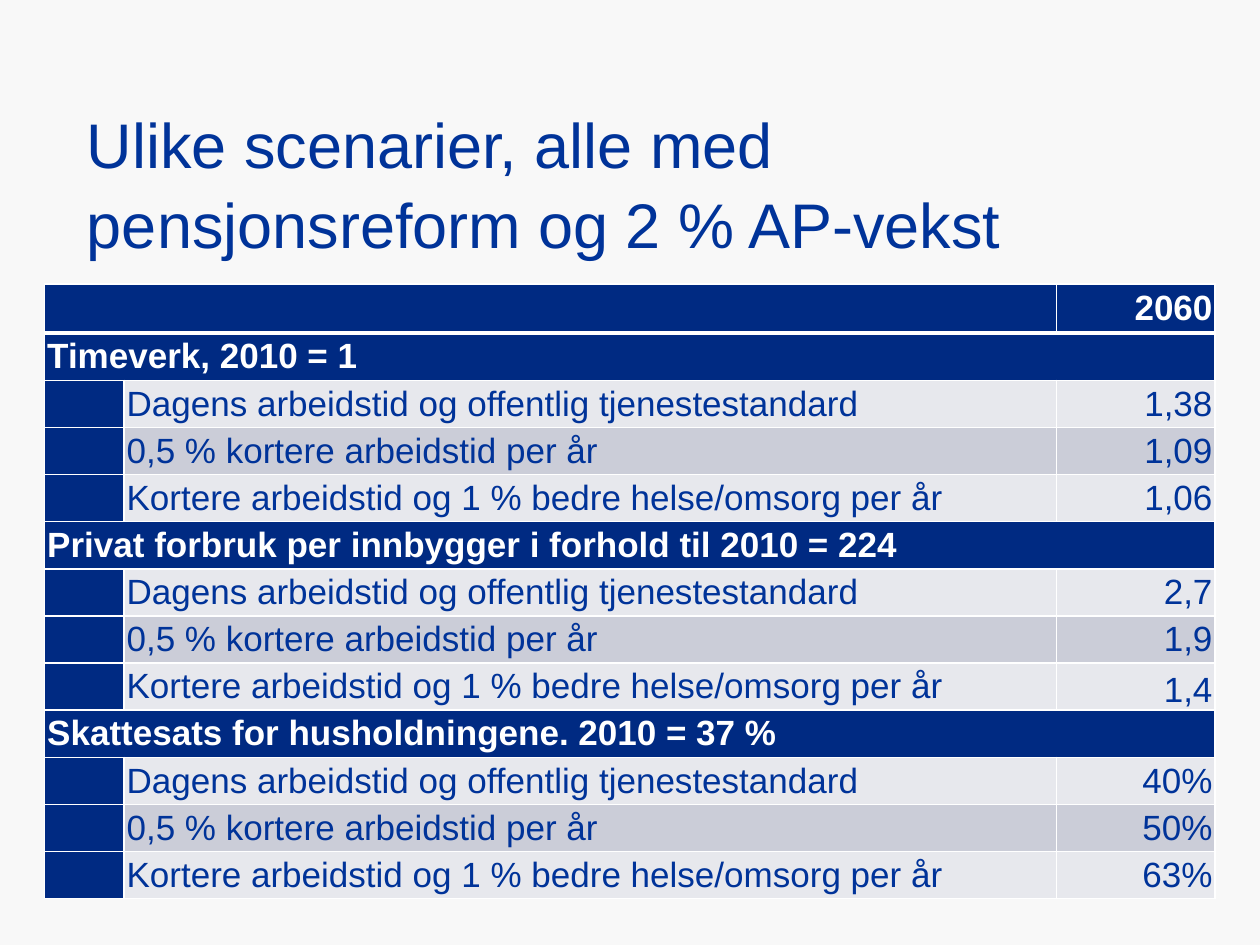
from dataclasses import dataclass
from typing import Any

from lxml.etree import SubElement as Sub
from pptx import Presentation as Deck
from pptx.dml.color import RGBColor as Rgb
from pptx.enum.text import MSO_ANCHOR as Anchor, MSO_AUTO_SIZE as Fit, PP_ALIGN as Align
from pptx.oxml.ns import qn
from pptx.util import Pt


@dataclass(frozen=True)
class Theme:
    font: str = "Arial"
    page: str = "F8F8F8"
    ink: str = "003399"
    navy: str = "002A82"
    pale: str = "E7E8ED"
    band: str = "CBCDD8"
    white: str = "FFFFFF"
    head: float = 36
    body: float = 20


@dataclass(frozen=True)
class Group:
    name: str
    values: tuple[str, ...]
    last: Any = Anchor.MIDDLE


LOOK = Theme()
COLS = (45.36, 532.8, 90.72)
HEAD_H, ROW_H = 28, 26.95
CASES = (
    "Dagens arbeidstid og offentlig tjenestestandard",
    "0,5 % kortere arbeidstid per år",
    "Kortere arbeidstid og 1 % bedre helse/omsorg per år",
)
GROUPS = (
    Group("Timeverk, 2010 = 1", ("1,38", "1,09", "1,06")),
    Group("Privat forbruk per innbygger i forhold til 2010 = 224",
          ("2,7", "1,9", "1,4"), Anchor.BOTTOM),
    Group("Skattesats for husholdningene. 2010 = 37 %", ("40%", "50%", "63%")),
)


def apply(item: Any, form: dict[str, Any]) -> None:
    for key, value in form.items():
        setattr(item, key, value)


def paint(fill: Any, tone: str) -> None:
    fill.solid()
    fill.fore_color.rgb = Rgb.from_string(tone)


def style(font: Any, size: float, tone: str, bold: bool) -> None:
    apply(font, {"name": LOOK.font, "size": Pt(size), "bold": bold})
    font.color.rgb = Rgb.from_string(tone)


def edge(cell: Any, top: float, base: float) -> None:
    props = cell._tc.get_or_add_tcPr()
    for side, width in (("L", 1), ("R", 1), ("T", top), ("B", base)):
        line = Sub(props, qn(f"a:ln{side}"), w=str(Pt(width)))
        Sub(Sub(line, qn("a:solidFill")), qn("a:srgbClr"), val=LOOK.white)


def base_cell(cell: Any, row: int) -> None:
    edge(cell, 3 if row == 1 else 1, 3 if row == 0 else 1)
    paint(cell.fill, LOOK.navy)
    apply(cell, {
        "margin_left": Pt(1.5), "margin_right": Pt(1.5),
        "margin_top": 0, "margin_bottom": 0,
        "vertical_anchor": Anchor.MIDDLE,
    })


def write(cell: Any, text: str, align: Any = Align.LEFT,
          tone: str = LOOK.white, bold: bool = True) -> None:
    para = cell.text_frame.paragraphs[0]
    para.alignment = align
    run = para.add_run()
    run.text = text
    style(run.font, LOOK.body, tone, bold)


def add_title(slide: Any) -> None:
    title = slide.shapes.title
    apply(title, {"left": Pt(42.5), "top": Pt(54.7),
                  "width": Pt(641), "height": Pt(94.3)})
    frame = title.text_frame
    frame.text = "Ulike scenarier, alle med pensjonsreform og 2 % AP-vekst"
    apply(frame, {"word_wrap": True, "auto_size": Fit.NONE,
                  "vertical_anchor": Anchor.TOP})
    para = frame.paragraphs[0]
    apply(para, {"alignment": Align.LEFT, "line_spacing": 1.05, "space_before": Pt(0)})
    style(para.runs[0].font, LOOK.head, LOOK.ink, False)


def add_group(grid: Any, top: int, group: Group) -> None:
    grid.cell(top, 0).merge(grid.cell(top, 2))
    write(grid.cell(top, 0), group.name)
    for step, (case, value) in enumerate(zip(CASES, group.values)):
        row = top + 1 + step
        for col, text, align in ((1, case, Align.LEFT), (2, value, Align.RIGHT)):
            cell = grid.cell(row, col)
            paint(cell.fill, LOOK.band if step % 2 else LOOK.pale)
            write(cell, text, align, LOOK.ink, False)
    grid.cell(top + len(CASES), 2).vertical_anchor = group.last


def add_grid(slide: Any) -> None:
    block = len(CASES) + 1
    count = 1 + block * len(GROUPS)
    grid = slide.shapes.add_table(
        count, len(COLS), Pt(25.5), Pt(162.4),
        Pt(sum(COLS)), Pt(HEAD_H + ROW_H * (count - 1))).table
    apply(grid, {"first_row": False, "horz_banding": False})
    for col, width in zip(grid.columns, COLS):
        col.width = Pt(width)
    for index, row in enumerate(grid.rows):
        row.height = Pt(ROW_H if index else HEAD_H)
        for cell in row.cells:
            base_cell(cell, index)
    grid.cell(0, 0).merge(grid.cell(0, 1))
    write(grid.cell(0, 2), "2060", Align.RIGHT)
    for index, group in enumerate(GROUPS):
        add_group(grid, 1 + index * block, group)


def main() -> None:
    deck = Deck()
    apply(deck, {"slide_width": Pt(720), "slide_height": Pt(540)})
    slide = deck.slides.add_slide(deck.slide_layouts[5])
    paint(slide.background.fill, LOOK.page)
    add_grid(slide)
    add_title(slide)
    deck.save("out.pptx")


if __name__ == "__main__":
    main()
